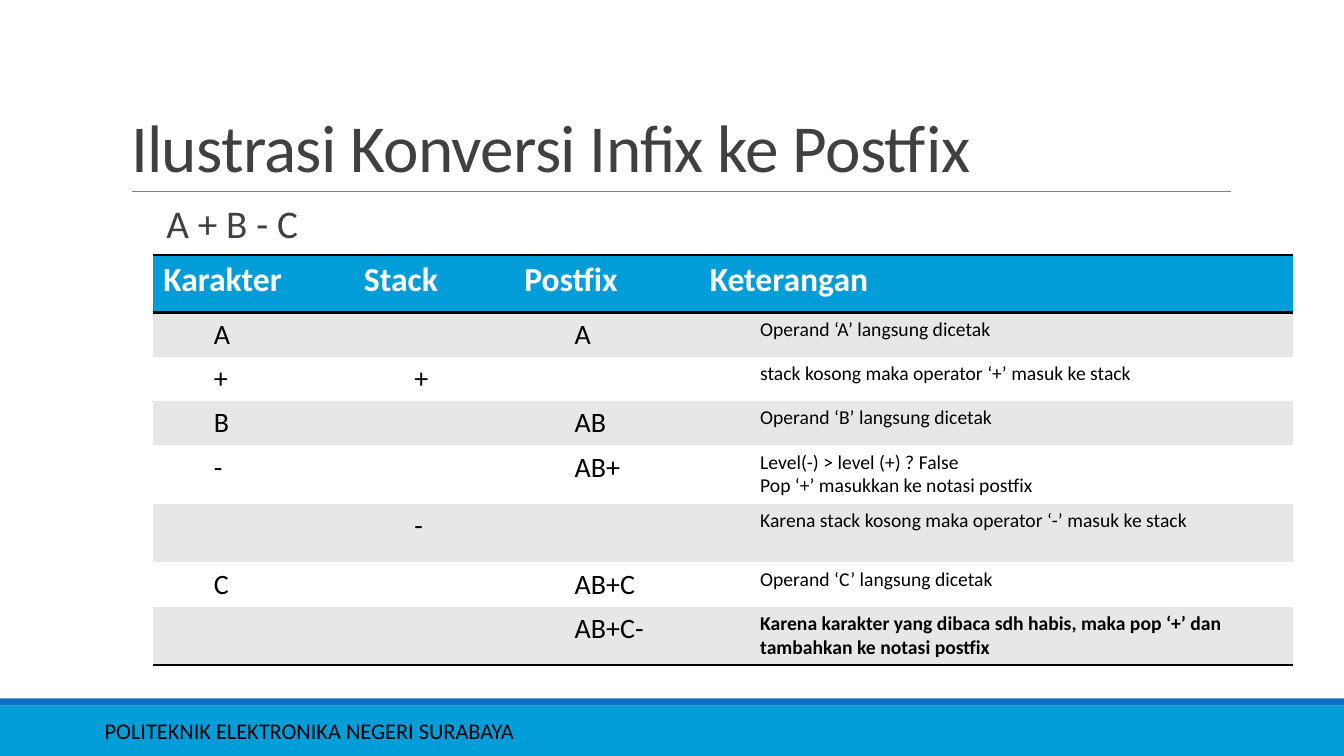
from lxml import etree
from pptx import Presentation, util as u
from pptx.dml.color import RGBColor
from pptx.enum import shapes, text
from pptx.oxml.ns import qn

TITLE = "Ilustrasi Konversi Infix ke Postfix"
INFIX = "A + B - C"
FOOTER = "POLITEKNIK ELEKTRONIKA NEGERI SURABAYA"
HEADS = ["Karakter", "Stack", "Postfix", "Keterangan"]
STEPS = [
    ("A", "", "A", "Operand ‘A’ langsung dicetak"),
    ("+", "+", "", "stack kosong maka operator ‘+’ masuk ke stack"),
    ("B", "", "AB", "Operand ‘B’ langsung dicetak"),
    ("-", "", "AB+", "Level(-) > level (+) ? False\nPop ‘+’ masukkan ke notasi postfix"),
    ("", "-", "", "Karena stack kosong maka operator ‘-’ masuk ke stack"),
    ("C", "", "AB+C", "Operand ‘C’ langsung dicetak"),
    ("", "", "AB+C-",
     "Karena karakter yang dibaca sdh habis, maka pop ‘+’ dan tambahkan ke notasi postfix"),
]
COLS = [199, 159, 184, 588]
ROWS = [57, 44, 44, 44, 58, 58, 44, 58]

CYAN = RGBColor(0x00, 0x9D, 0xD9)
BLUE = RGBColor(0x0F, 0x6F, 0xC6)
GREY = RGBColor(0x80, 0x80, 0x80)
DARK = RGBColor(0x40, 0x40, 0x40)
BAND = RGBColor(0xE7, 0xE7, 0xE7)
BLACK = RGBColor(0, 0, 0)
WHITE = RGBColor(255, 255, 255)
FONT = "Calibri"
PLAIN = "{2D5ABB26-0587-4C30-8999-92F81FD0307C}"  # table style without grid


def px(n):
    """Turn px, 100 to the inch, into EMU."""
    return u.Emu(n * 9144)


def place(shape, *box):
    shape.left, shape.top, shape.width, shape.height = map(px, box)


def style(para, size, color, bold=False):
    font = para.font
    font.name, font.size, font.bold = FONT, u.Pt(size), bold
    font.color.rgb = color


def bar(top, high, color):
    rect = slide.shapes.add_shape(
        shapes.MSO_SHAPE.RECTANGLE, 0, px(top), deck.slide_width, px(high))
    rect.shadow.inherit = False
    rect.fill.solid()
    rect.fill.fore_color.rgb = color
    rect.line.fill.background()


def edge(cell, tag):
    """Add a black 2 pt border; call before the cell gets its fill."""
    line = etree.SubElement(cell._tc.get_or_add_tcPr(), qn(tag), w=str(u.Pt(2)))
    fill = etree.SubElement(line, qn("a:solidFill"))
    etree.SubElement(fill, qn("a:srgbClr"), val=str(BLACK))


deck = Presentation()
deck.slide_width, deck.slide_height = px(1333), px(750)
slide = deck.slides.add_slide(deck.slide_layouts[1])
title, body = slide.placeholders

bar(700, 50, CYAN)
bar(693, 7, BLUE)
rule = slide.shapes.add_connector(
    shapes.MSO_CONNECTOR.STRAIGHT, px(131), px(190), px(1221), px(190))
rule.line.color.rgb = GREY
rule.line.width = u.Pt(0.5)
etree.SubElement(rule._element.spPr, qn("a:effectLst"))

foot = slide.shapes.add_textbox(px(94), px(705), px(841), px(40)).text_frame
foot.word_wrap = True
foot.vertical_anchor = text.MSO_ANCHOR.MIDDLE
foot.text = FOOTER
style(foot.paragraphs[0], 16, BLACK)

place(title, 120, 31, 1100, 159)
frame = title.text_frame
frame.text = TITLE
frame.auto_size = text.MSO_AUTO_SIZE.NONE
frame.vertical_anchor = text.MSO_ANCHOR.BOTTOM
para = frame.paragraphs[0]
para.alignment = text.PP_ALIGN.LEFT
para.line_spacing = 0.85
style(para, 48, DARK)
para.runs[0].font._element.set("spc", "-50")

place(body, 165, 202, 328, 51)
frame = body.text_frame
frame.text = INFIX
frame.auto_size = text.MSO_AUTO_SIZE.NONE
frame.margin_left = frame.margin_right = 0
para = frame.paragraphs[0]
props = para._p.get_or_add_pPr()
props.set("marL", "0")
props.set("indent", "0")
etree.SubElement(props, qn("a:buNone"))
para.line_spacing = 0.8
para.space_before = u.Pt(0)
style(para, 28, DARK)

grid = slide.shapes.add_table(
    len(ROWS), len(COLS), px(152), px(253), px(sum(COLS)), px(sum(ROWS)))
table = grid.table
table._tbl.tblPr.find(qn("a:tableStyleId")).text = PLAIN
for col, wide in zip(table.columns, COLS):
    col.width = px(wide)
for row, high in zip(table.rows, ROWS):
    row.height = px(high)

last = len(STEPS)
for r, words in enumerate([HEADS] + STEPS):
    for c, word in enumerate(words):
        cell = table.cell(r, c)
        if r == 0:
            edge(cell, "a:lnT")
        if r in (0, last):
            edge(cell, "a:lnB")
        cell.fill.solid()
        cell.fill.fore_color.rgb = CYAN if r == 0 else BAND if r % 2 else WHITE
        if not word:
            continue
        cell.text = word
        note = c == len(COLS) - 1
        for para in cell.text_frame.paragraphs:
            if r == 0:
                style(para, 24, WHITE, True)
            else:
                para._p.get_or_add_pPr().set("marL", str(px(50)))
                style(para, 14 if note else 20, BLACK, note and r == last)

deck.save("out.pptx")
